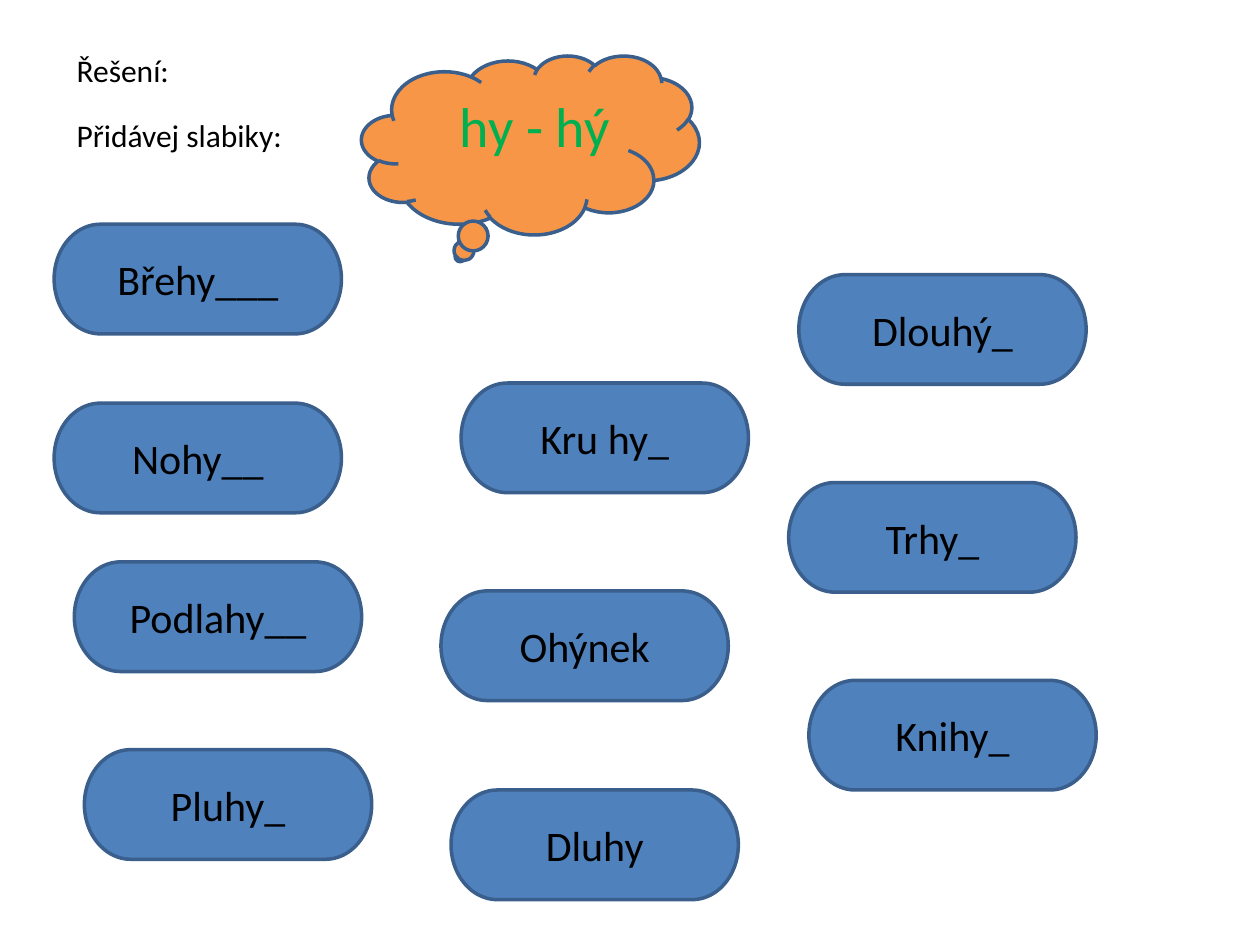
from lxml import etree
from pptx import Presentation
from pptx.dml.color import RGBColor
from pptx.enum.shapes import MSO_SHAPE
from pptx.enum.text import MSO_ANCHOR, PP_ALIGN
from pptx.oxml.ns import qn
from pptx.util import Inches, Pt

CLOUD = MSO_SHAPE.CLOUD_CALLOUT
TERMINATOR = MSO_SHAPE.FLOWCHART_TERMINATOR
MIDDLE = MSO_ANCHOR.MIDDLE
CENTER = PP_ALIGN.CENTER

FONT = "Calibri"
COLORS = {
    "text": "000000",
    "syllable": "00B050",
    "cloud": "F79646",
    "word": "4F81BD",
    "outline": "3A5F8C",
}

HEADING = "Řešení:"
INSTRUCTION = "Přidávej slabiky:"
SYLLABLES = "hy - hý"
SYLLABLES_TAB = 3.04

WORD_SIZE = (2.28, 0.87)
WORDS = [  # text, left, top
    ("Břehy___", 0.43, 1.78),
    ("Nohy__", 0.43, 3.2),
    ("Kru hy_", 3.66, 3.04),
    ("Podlahy__", 0.59, 4.46),
    ("Pluhy_", 0.67, 5.95),
    ("Ohýnek", 3.5, 4.69),
    ("Dluhy", 3.58, 6.27),
    ("Knihy_", 6.42, 5.4),
    ("Trhy_", 6.26, 3.83),
    ("Dlouhý_", 6.34, 2.18),
]


def color(name):
    return RGBColor.from_string(COLORS[name])


def add_span(para, text, size, color_name="text"):
    span = para.add_run()
    span.text = text
    span.font.name = FONT
    span.font.size = Pt(size)
    span.font.color.rgb = color(color_name)


def add_outlined(page, kind, left, top, width, height, fill):
    shape = page.shapes.add_shape(
        kind, Inches(left), Inches(top), Inches(width), Inches(height))
    shape.shadow.inherit = False
    shape.fill.solid()
    shape.fill.fore_color.rgb = color(fill)
    shape.line.color.rgb = color("outline")
    shape.line.width = Pt(2)
    return shape


def add_label(page, left, top, width, height):
    """Add an empty wrapping text box and return its first paragraph."""
    box = page.shapes.add_textbox(
        Inches(left), Inches(top), Inches(width), Inches(height))
    box.text_frame.word_wrap = True
    return box.text_frame.paragraphs[0]


def add_tab_stop(para, position):
    properties = para._p.get_or_add_pPr()
    stops = etree.SubElement(properties, qn("a:tabLst"))
    etree.SubElement(stops, qn("a:tab"), pos=str(Inches(position)), algn="l")


deck = Presentation()
deck.slide_width, deck.slide_height = Inches(10), Inches(7.5)
page = deck.slides.add_slide(deck.slide_layouts[6])

add_outlined(page, CLOUD, 2.87, 0.44, 2.68, 1.42, "cloud")

instruction = add_label(page, 0.51, 0.68, 4.5, 0.64)
add_tab_stop(instruction, SYLLABLES_TAB)
add_span(instruction, INSTRUCTION + "\t", 18)
add_span(instruction, SYLLABLES, 32, "syllable")

for word, left, top in WORDS:
    shape = add_outlined(page, TERMINATOR, left, top, *WORD_SIZE, "word")
    shape.text_frame.vertical_anchor = MIDDLE
    para = shape.text_frame.paragraphs[0]
    para.alignment = CENTER
    add_span(para, word, 24)

add_span(add_label(page, 0.51, 0.36, 2.2, 0.4), HEADING, 18)

deck.save("out.pptx")
